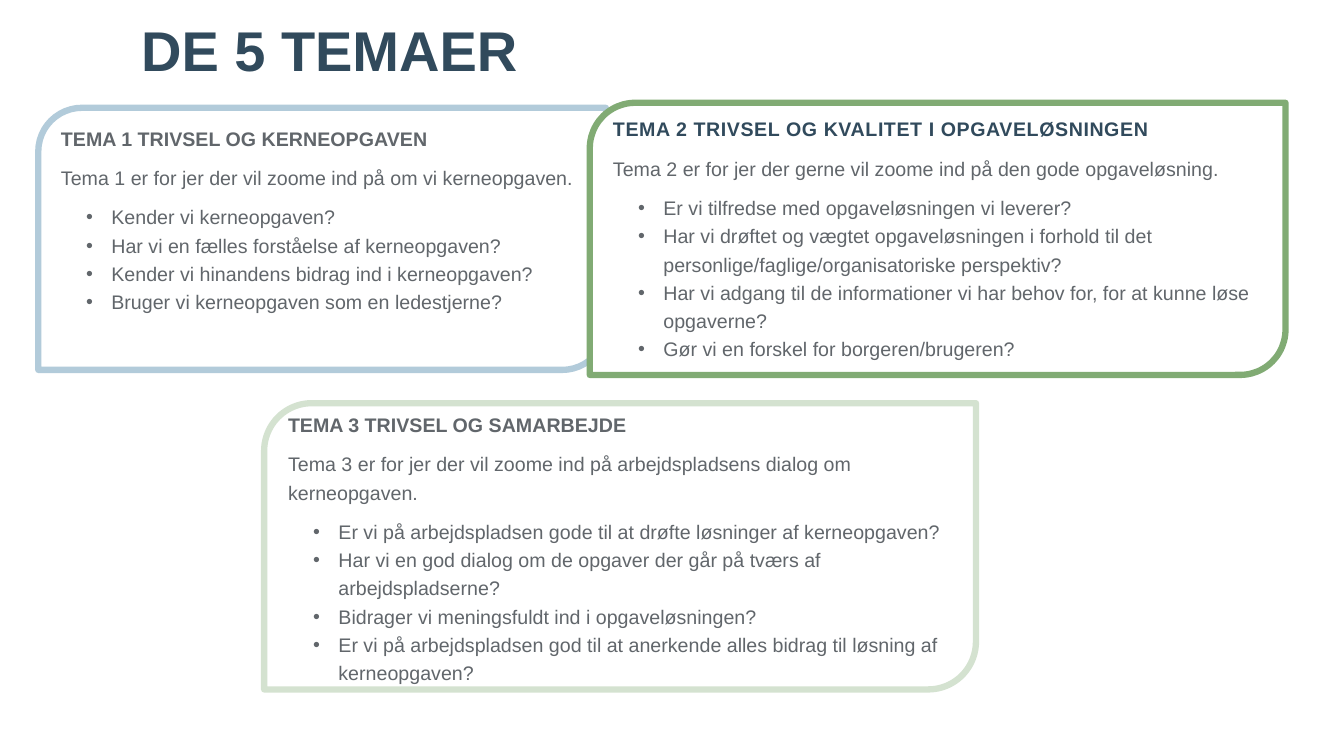
from dataclasses import dataclass

from lxml import etree
from pptx import Presentation
from pptx import util as u
from pptx.dml.color import RGBColor
from pptx.enum import shapes, text
from pptx.oxml.ns import qn

COLOURS = {
    "white": "FFFFFF",
    "navy": "314A5C",
    "grey": "61666B",
    "blue": "B2CBDA",
    "green": "81AB74",
    "pale_green": "D4E2D0",
}


@dataclass
class Theme:
    box: tuple[float, float, float, float]
    border: str
    heading: str
    intro: str
    questions: list[str]
    heading_colour: str = "grey"
    heading_lines: float = 1.2
    tracking: int = 0  # hundredths of a point
    bottom_inset: float = 0.05


THEMES = [
    Theme(
        (0.38, 1.07, 5.63, 2.6), "blue",
        "TEMA 1 TRIVSEL OG KERNEOPGAVEN",
        "Tema 1 er for jer der vil zoome ind på om vi kerneopgaven.",
        [
            "Kender vi kerneopgaven?",
            "Har vi en fælles forståelse af kerneopgaven?",
            "Kender vi hinandens bidrag ind i kerneopgaven?",
            "Bruger vi kerneopgaven som en ledestjerne?",
        ],
        bottom_inset=0.47,
    ),
    Theme(
        (5.85, 1.02, 6.9, 2.7), "green",
        "TEMA 2 TRIVSEL OG KVALITET I OPGAVELØSNINGEN",
        "Tema 2 er for jer der gerne vil zoome ind på den gode opgaveløsning.",
        [
            "Er vi tilfredse med opgaveløsningen vi leverer?",
            "Har vi drøftet og vægtet opgaveløsningen i forhold til det "
            "personlige/faglige/organisatoriske perspektiv?",
            "Har vi adgang til de informationer vi har behov for, for at kunne løse opgaverne?",
            "Gør vi en forskel for borgeren/brugeren?",
        ],
        heading_colour="navy", heading_lines=1.0, tracking=40,
    ),
    Theme(
        (2.62, 4, 7.06, 2.84), "pale_green",
        "TEMA 3 TRIVSEL OG SAMARBEJDE",
        "Tema 3 er for jer der vil zoome ind på arbejdspladsens dialog om kerneopgaven.",
        [
            "Er vi på arbejdspladsen gode til at drøfte løsninger af kerneopgaven?",
            "Har vi en god dialog om de opgaver der går på tværs af arbejdspladserne?",
            "Bidrager vi meningsfuldt ind i opgaveløsningen?",
            "Er vi på arbejdspladsen god til at anerkende alles bidrag til løsning af kerneopgaven?",
        ],
    ),
]


def colour(name: str) -> RGBColor:
    return RGBColor.from_string(COLOURS[name])


def apply(target, values: dict) -> None:
    for name, value in values.items():
        setattr(target, name, value)


def write(paragraph, words: str, size: float, ink: str, bold: bool,
          lines: float, after: float = 0, tracking: int = 0) -> None:
    apply(paragraph, {"alignment": text.PP_ALIGN.LEFT, "line_spacing": lines,
                      "space_before": u.Pt(0), "space_after": u.Pt(after)})
    run = paragraph.add_run()
    run.text = words
    apply(run.font, {"name": "Arial", "size": u.Pt(size), "bold": bold})
    run.font.color.rgb = colour(ink)
    if tracking:
        run.font._element.set("spc", str(tracking))


def add_bullet(paragraph) -> None:
    properties = paragraph._p.get_or_add_pPr()
    properties.set("marL", str(u.Inches(0.5)))
    properties.set("indent", str(u.Inches(-0.25)))
    etree.SubElement(properties, qn("a:buFont")).set("typeface", "Arial")
    etree.SubElement(properties, qn("a:buChar")).set("char", "•")


def draw_theme(slide, theme: Theme) -> None:
    card = slide.shapes.add_shape(shapes.MSO_SHAPE.ROUND_2_DIAG_RECTANGLE,
                                  *map(u.Inches, theme.box))
    card.shadow.inherit = False
    card.fill.solid()
    card.fill.fore_color.rgb = colour("white")
    card.line.color.rgb = colour(theme.border)
    card.line.width = u.Pt(4.5)

    frame = card.text_frame
    apply(frame, {"word_wrap": True, "vertical_anchor": text.MSO_ANCHOR.MIDDLE,
                  "margin_bottom": u.Inches(theme.bottom_inset)})
    write(frame.paragraphs[0], theme.heading, 14, theme.heading_colour, True,
          theme.heading_lines, 8, theme.tracking)
    write(frame.add_paragraph(), theme.intro, 14, "grey", False, 1.2, 8)
    for question in theme.questions:
        item = frame.add_paragraph()
        add_bullet(item)
        after = 8 if question == theme.questions[-1] else 0
        write(item, question, 14, "grey", False, 1.2, after)


def draw_title(slide, words: str) -> None:
    title = slide.shapes.add_textbox(*map(u.Inches, (1.2, 0.28, 10.28, 0.63)))
    apply(title.text_frame, {
        "word_wrap": True, "vertical_anchor": text.MSO_ANCHOR.BOTTOM,
        "margin_left": u.Inches(0.2), "margin_right": u.Inches(0.08),
        "margin_top": u.Inches(0.08), "margin_bottom": u.Inches(0.08),
    })
    write(title.text_frame.paragraphs[0], words, 40, "navy", True, 0.9)


def main() -> None:
    deck = Presentation()
    apply(deck, {"slide_width": u.Inches(13.33), "slide_height": u.Inches(7.5)})
    slide = deck.slides.add_slide(deck.slide_layouts[6])

    # Title
    draw_title(slide, "DE 5 TEMAER")

    # Theme cards, back to front
    for theme in THEMES:
        draw_theme(slide, theme)

    deck.save("out.pptx")


if __name__ == "__main__":
    main()
